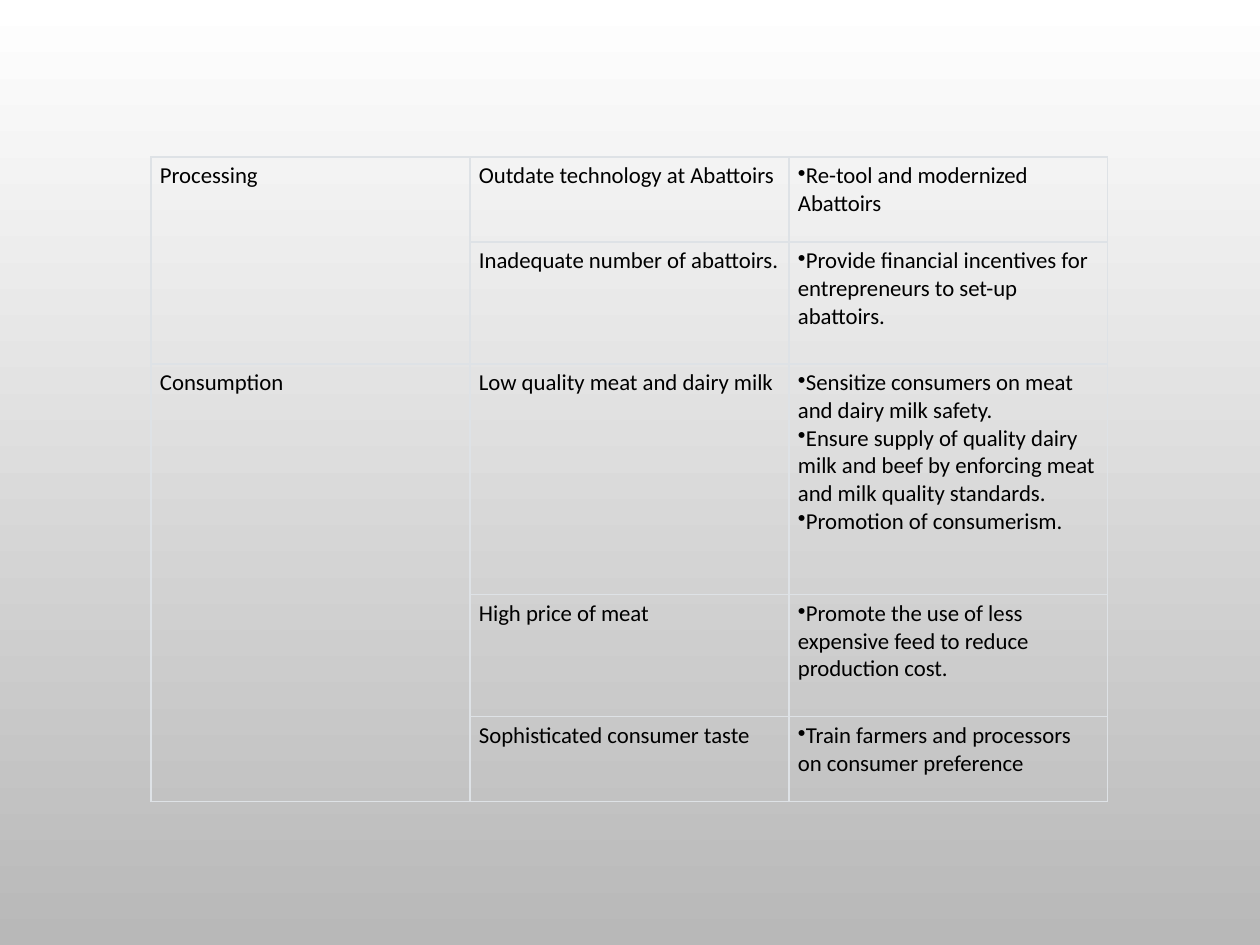
from dataclasses import dataclass

from lxml import etree
from pptx import Presentation
from pptx.dml.color import RGBColor
from pptx.oxml.ns import qn
from pptx.util import Emu, Pt

PX_PER_INCH = 126


@dataclass(frozen=True)
class Theme:
    font: str = "Calibri"
    body_size: float = 13
    border_width: float = 0.75
    text: str = "000000"
    border: str = "DEE2E6"
    background_top: str = "FFFFFF"
    background_bottom: str = "B8B8B8"


@dataclass(frozen=True)
class Challenge:
    problem: str
    actions: tuple[str, ...]
    height: int


@dataclass(frozen=True)
class Stage:
    name: str
    challenges: tuple[Challenge, ...]


THEME = Theme()
TABLE_LEFT, TABLE_TOP, COLUMN_WIDTH, COLUMN_COUNT = 151, 157, 319, 3
INSET_X, INSET_Y = 9, 5

STAGES = (
    Stage("Processing", (
        Challenge("Outdate technology at Abattoirs",
                  ("Re-tool and modernized Abattoirs",), 85),
        Challenge("Inadequate number of abattoirs.",
                  ("Provide financial incentives for entrepreneurs to set-up abattoirs.",), 122),
    )),
    Stage("Consumption", (
        Challenge("Low quality meat and dairy milk",
                  ("Sensitize consumers on meat and dairy milk safety.",
                   "Ensure supply of quality dairy milk and beef by enforcing meat "
                   "and milk quality standards.",
                   "Promotion of consumerism."), 231),
        Challenge("High price of meat",
                  ("Promote the use of less expensive feed to reduce production cost.",), 122),
        Challenge("Sophisticated consumer taste",
                  ("Train farmers and processors on consumer preference",), 85),
    )),
)


def px(length: int) -> Emu:
    return Emu(round(length * 914400 / PX_PER_INCH))


def paint_background(slide) -> None:
    fill = slide.background.fill
    fill.gradient()
    fill.gradient_angle = 270
    colors = (THEME.background_top, THEME.background_bottom)
    for stop, color in zip(fill.gradient_stops, colors):
        stop.color.rgb = RGBColor.from_string(color)


def style_cell(cell) -> None:
    """Give the cell its borders and insets, and leave it unfilled."""
    properties = cell._tc.get_or_add_tcPr()
    for side in ("a:lnL", "a:lnR", "a:lnT", "a:lnB"):
        line = etree.SubElement(properties, qn(side), w=str(Pt(THEME.border_width)))
        solid = etree.SubElement(line, qn("a:solidFill"))
        etree.SubElement(solid, qn("a:srgbClr"), val=THEME.border)
    cell.fill.background()
    cell.margin_left = cell.margin_right = px(INSET_X)
    cell.margin_top = cell.margin_bottom = px(INSET_Y)


def write_cell(cell, lines: tuple[str, ...], bulleted: bool = False) -> None:
    frame = cell.text_frame
    for index, line in enumerate(lines):
        paragraph = frame.add_paragraph() if index else frame.paragraphs[0]
        if bulleted:
            properties = paragraph._p.get_or_add_pPr()
            properties.set("marL", "0")
            properties.set("indent", "0")
            etree.SubElement(properties, qn("a:buChar"), char="•")
        run = paragraph.add_run()
        run.text = line
        run.font.name = THEME.font
        run.font.size = Pt(THEME.body_size)
        run.font.color.rgb = RGBColor.from_string(THEME.text)


def add_stage_table(slide, stages: tuple[Stage, ...]) -> None:
    challenges = [challenge for stage in stages for challenge in stage.challenges]
    table = slide.shapes.add_table(
        len(challenges), COLUMN_COUNT, px(TABLE_LEFT), px(TABLE_TOP),
        px(COLUMN_WIDTH * COLUMN_COUNT), px(sum(c.height for c in challenges)),
    ).table
    table.first_row = False
    table.horz_banding = False
    for column in table.columns:
        column.width = px(COLUMN_WIDTH)
    for cell in table.iter_cells():
        style_cell(cell)

    for row, challenge in enumerate(challenges):
        table.rows[row].height = px(challenge.height)
        write_cell(table.cell(row, 1), (challenge.problem,))
        write_cell(table.cell(row, 2), challenge.actions, bulleted=True)

    first_row = 0
    for stage in stages:
        next_row = first_row + len(stage.challenges)
        stage_cell = table.cell(first_row, 0)
        stage_cell.merge(table.cell(next_row - 1, 0))
        write_cell(stage_cell, (stage.name,))
        first_row = next_row


def main() -> None:
    presentation = Presentation()
    presentation.slide_width = px(1260)
    presentation.slide_height = px(945)
    slide = presentation.slides.add_slide(presentation.slide_layouts[6])
    paint_background(slide)
    add_stage_table(slide, STAGES)
    presentation.save("out.pptx")


if __name__ == "__main__":
    main()
